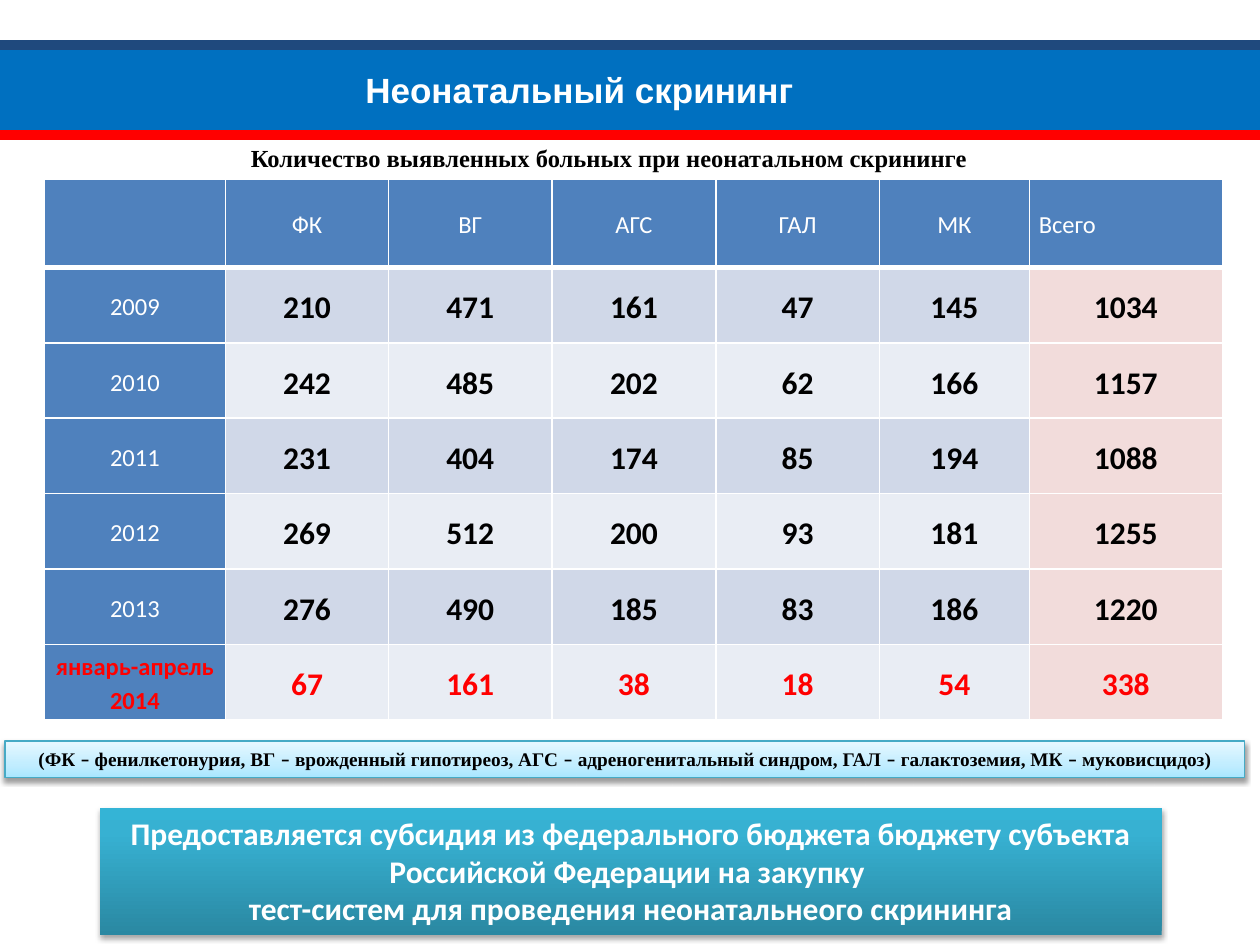
from lxml import etree
from pptx import Presentation
from pptx.dml.color import RGBColor
from pptx.enum import shapes, text
from pptx.oxml import parse_xml
from pptx.oxml.ns import nsdecls, qn
from pptx.util import Cm, Pt

WHITE = RGBColor(0xFF, 0xFF, 0xFF)
BLACK = RGBColor(0, 0, 0)
RED = RGBColor(0xFF, 0, 0)
BAND = RGBColor(0x00, 0x70, 0xC0)
NAVY = RGBColor(0x1F, 0x49, 0x7D)
HEAD = RGBColor(0x4F, 0x81, 0xBD)
ROW_DARK = RGBColor(0xD0, 0xD8, 0xE8)
ROW_LIGHT = RGBColor(0xE9, 0xED, 0xF4)
TOTAL = RGBColor(0xF2, 0xDC, 0xDB)
TEAL = RGBColor(0x46, 0xAA, 0xC5)
LEGEND_STOPS = [(0, RGBColor(0xA7, 0xE6, 0xFF)), (35, RGBColor(0xC1, 0xED, 0xFF)),
                (100, RGBColor(0xE7, 0xF8, 0xFF))]
CALLOUT_STOPS = [(0, RGBColor(0x2A, 0x88, 0xA2)), (80, RGBColor(0x37, 0xB1, 0xD2)),
                 (100, RGBColor(0x34, 0xB4, 0xD6))]

COL_WIDTHS = [3.66, 3.28, 3.3, 3.3, 3.3, 3.02, 3.89]
ROWS = [
    ["", "ФК", "ВГ", "АГС", "ГАЛ", "МК", "Всего"],
    ["2009", "210", "471", "161", "47", "145", "1034"],
    ["2010", "242", "485", "202", "62", "166", "1157"],
    ["2011", "231", "404", "174", "85", "194", "1088"],
    ["2012", "269", "512", "200", "93", "181", "1255"],
    ["2013", "276", "490", "185", "83", "186", "1220"],
    ["январь-апрель\n2014", "67", "161", "38", "18", "54", "338"],
]
LEGEND = ("(ФК – фенилкетонурия, ВГ – врожденный гипотиреоз, АГС – адреногенитальный "
          "синдром, ГАЛ – галактоземия, МК – муковисцидоз)")
CALLOUT = ("Предоставляется субсидия из федерального бюджета бюджету субъекта "
           "Российской Федерации на закупку \v"
           "тест-систем для проведения неонатальнеого скрининга")


def set_font(font, name, size, color, bold=True):
    font.name, font.size, font.bold = name, Pt(size), bold
    font.color.rgb = color


def add_rect(s, left, top, width, height):
    sp = s.shapes.add_shape(shapes.MSO_SHAPE.RECTANGLE, Cm(left), Cm(top), Cm(width), Cm(height))
    sp.shadow.inherit = False
    sp.line.fill.background()
    return sp


def add_rule(s, y, color):
    line = s.shapes.add_connector(shapes.MSO_CONNECTOR.STRAIGHT, 0, Cm(y), Cm(25.4), Cm(y))
    line.line.color.rgb = color
    line.line.width = Pt(6)
    etree.SubElement(line._element.spPr, qn("a:effectLst"))


def add_panel(s, left, top, width, height, stops, opacity):
    """Rectangle with an upward gradient and a soft shadow below it."""
    sp = add_rect(s, left, top, width, height)
    sp.fill.gradient()
    sp.fill.gradient_angle = 90
    spPr = sp._element.spPr
    stop_list = spPr.find(".//" + qn("a:gsLst"))
    for old in list(stop_list):
        stop_list.remove(old)
    for pos, color in stops:
        stop_list.append(parse_xml(
            f'<a:gs {nsdecls("a")} pos="{pos * 1000}"><a:srgbClr val="{color}"/></a:gs>'))
    spPr.find(qn("a:effectLst")).append(parse_xml(
        f'<a:outerShdw {nsdecls("a")} blurRad="{Pt(3.1)}" dist="{Pt(1.7)}" dir="5400000" '
        f'rotWithShape="0"><a:srgbClr val="000000"><a:alpha val="{opacity * 1000}"/>'
        '</a:srgbClr></a:outerShdw>'))
    return sp


def format_text(sp, name, size, color, align, wrap):
    tf = sp.text_frame
    tf.word_wrap = wrap
    tf.auto_size = text.MSO_AUTO_SIZE.SHAPE_TO_FIT_TEXT
    tf.vertical_anchor = text.MSO_ANCHOR.TOP if wrap else text.MSO_ANCHOR.MIDDLE
    p = tf.paragraphs[0]
    p.alignment = align
    set_font(p.font, name, size, color)


def set_borders(cell, bottom):
    tcPr = cell._tc.get_or_add_tcPr()
    for i, (side, width) in enumerate(zip("LRTB", (1, 1, 1, bottom))):
        tcPr.insert(i, parse_xml(
            f'<a:ln{side} {nsdecls("a")} w="{Pt(width)}"><a:solidFill>'
            f'<a:srgbClr val="{WHITE}"/></a:solidFill></a:ln{side}>'))


def fill_cell(cell, value, row, col):
    heading = row == 0 or col == 0
    last_row, last_col = row == len(ROWS) - 1, col == len(COL_WIDTHS) - 1
    cell.fill.solid()
    cell.fill.fore_color.rgb = (HEAD if heading else TOTAL if last_col
                                else ROW_DARK if row % 2 else ROW_LIGHT)
    set_borders(cell, 3 if row == 0 else 1)
    cell.margin_left = cell.margin_right = Cm(0.19)
    cell.margin_top = cell.margin_bottom = 0
    cell.vertical_anchor = text.MSO_ANCHOR.MIDDLE
    cell.text = value
    for p in cell.text_frame.paragraphs:
        p.line_spacing = 1.15
        p.alignment = text.PP_ALIGN.LEFT if row == 0 and last_col else text.PP_ALIGN.CENTER
        set_font(p.font, "Calibri", 14 if heading else 18,
                 RED if last_row else WHITE if heading else BLACK,
                 last_row or not heading)


def add_results(s):
    table = s.shapes.add_table(len(ROWS), len(COL_WIDTHS), Cm(0.89), Cm(3.61),
                               Cm(sum(COL_WIDTHS)), Cm(10.9)).table
    for column, width in zip(table.columns, COL_WIDTHS):
        column.width = Cm(width)
    for r, values in enumerate(ROWS):
        table.rows[r].height = Cm(1.52 if r else 1.78)
        for c, value in enumerate(values):
            fill_cell(table.cell(r, c), value, r, c)


def add_title(s):
    title = s.shapes.title
    s.shapes._spTree.append(title._element)  # above the band
    title.left, title.top, title.width, title.height = Cm(7.11), Cm(1.24), Cm(9.22), Cm(1.12)
    title.text_frame.text = "Неонатальный скрининг"
    format_text(title, "Arial", 20, WHITE, text.PP_ALIGN.LEFT, False)


def add_legend(s):
    sp = add_panel(s, 0.1, 14.94, 24.99, 0.74, LEGEND_STOPS, 38)
    sp.line.color.rgb = TEAL
    sp.line.width = Pt(0.75)
    format_text(sp, "Times New Roman", 11, BLACK, text.PP_ALIGN.CENTER, True)
    p = sp.text_frame.paragraphs[0]
    for i, part in enumerate(LEGEND.split("–")):
        if i:
            dash = p.add_run()
            dash.text, dash.font.name = "–", "Calibri"
        p.add_run().text = part


def main():
    prs = Presentation()
    prs.slide_width, prs.slide_height = Cm(25.4), Cm(19.05)
    s = prs.slides.add_slide(prs.slide_layouts[5])

    # Header band
    band = add_rect(s, 0, 0.97, 25.4, 1.8)
    band.fill.solid()
    band.fill.fore_color.rgb = BAND
    add_rule(s, 0.91, NAVY)
    add_rule(s, 2.72, RED)

    # Table, title and legend
    add_results(s)
    add_title(s)
    add_legend(s)

    # Table caption
    caption = s.shapes.add_textbox(Cm(4.7), Cm(2.74), Cm(15.16), Cm(0.86))
    caption.text_frame.text = "Количество выявленных больных при неонатальном скрининге"
    format_text(caption, "Times New Roman", 14, BLACK, text.PP_ALIGN.CENTER, False)

    # Funding callout
    callout = add_panel(s, 2.01, 16.28, 21.41, 2.57, CALLOUT_STOPS, 35)
    callout.text_frame.paragraphs[0].text = CALLOUT
    format_text(callout, "Calibri", 18, WHITE, text.PP_ALIGN.CENTER, True)

    prs.save("out.pptx")


if __name__ == "__main__":
    main()
